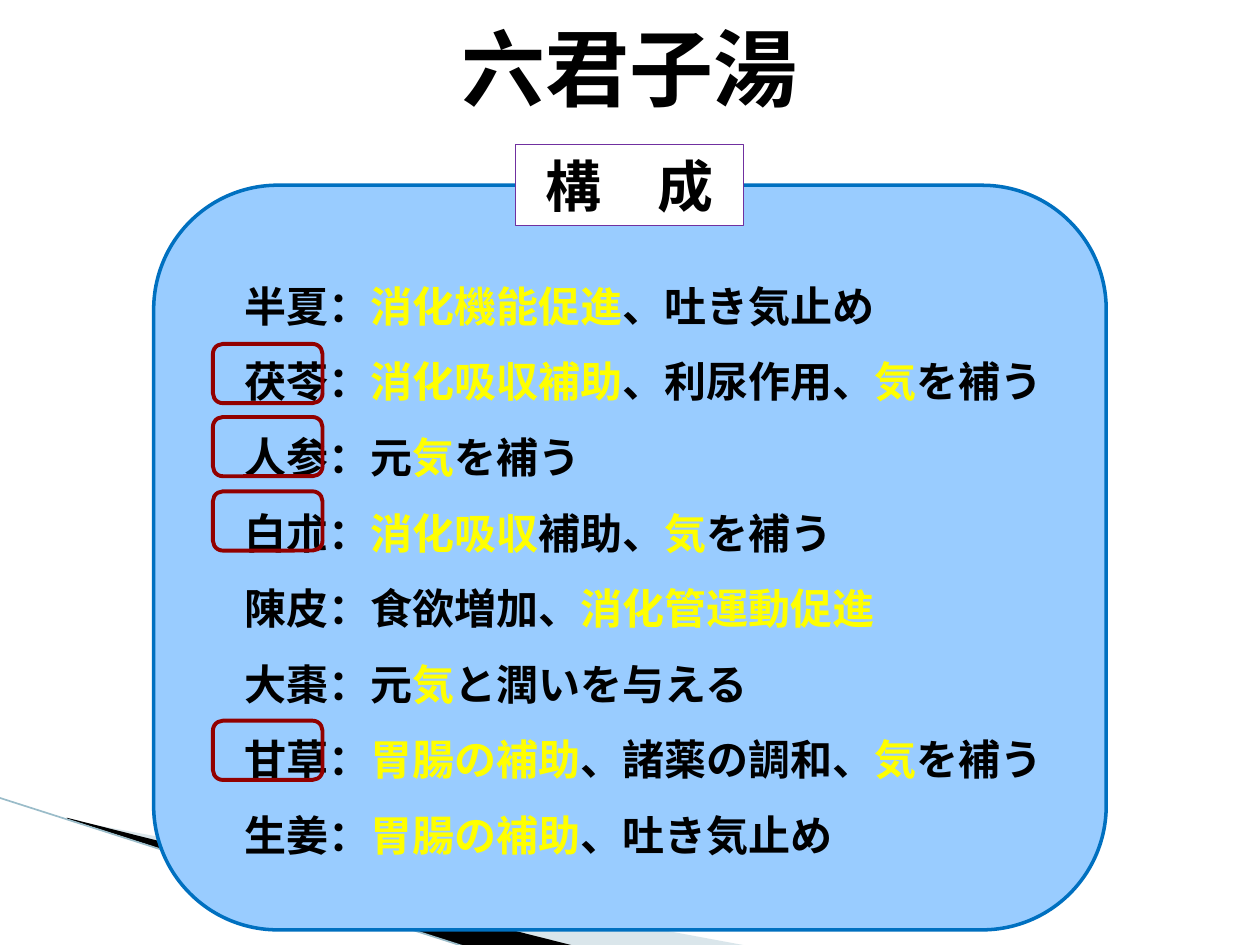
from dataclasses import dataclass
from typing import Optional

import pptx
import pptx.dml.color
import pptx.enum.shapes
import pptx.enum.text
import pptx.oxml
import pptx.oxml.ns
import pptx.util

COLORS = {
    "black": "000000",
    "white": "FFFFFF",
    "highlight": "FFFF00",
    "panel": "99CCFF",
    "panel_line": "0070C0",
    "label_line": "7030A0",
    "marker_line": "920000",
    "swoosh": "A3C2CE",
    "swoosh_line": "9ABCC9",
}
SHAPES = pptx.enum.shapes.MSO_SHAPE
ALIGN = pptx.enum.text.PP_ALIGN
ANCHOR = pptx.enum.text.MSO_ANCHOR

presentation = pptx.Presentation()
presentation.slide_width = pptx.util.Inches(10)
presentation.slide_height = pptx.util.Inches(7.5)
COLUMN = presentation.slide_width / 100
ROW = presentation.slide_height / 100


@dataclass
class Area:
    column: float
    row: float
    columns: float
    rows: float

    def lengths(self) -> list[int]:
        return [round(self.column * COLUMN), round(self.row * ROW),
                round(self.columns * COLUMN), round(self.rows * ROW)]


@dataclass
class Box:
    area: Area
    kind: int
    line: str
    line_width: float
    fill: Optional[str] = None


@dataclass
class Swoosh:
    points: list[tuple[float, float]]
    fill: str
    opacity: int = 100


@dataclass
class TextStyle:
    size: int
    font: str
    align: int
    anchor: int
    spacing: float = 1.0


TITLE_STYLE = TextStyle(48, "Arial", ALIGN.CENTER, ANCHOR.MIDDLE)
LABEL_STYLE = TextStyle(32, "Calibri", ALIGN.CENTER, ANCHOR.TOP)
HERB_STYLE = TextStyle(24, "Calibri", ALIGN.LEFT, ANCHOR.MIDDLE, 1.5)

SWOOSHES = [
    Swoosh([(5.5, 86.8), (59.5, 100.13), (45.6, 100.13), (5.5, 86.67)], "swoosh", 40),
    Swoosh([(5.3, 86.53), (45.7, 100.13), (37.2, 100.27), (5.4, 86.67)], "black"),
]
PANEL = Box(Area(12.2, 19.6, 75.6, 78.8), SHAPES.ROUNDED_RECTANGLE, "panel_line", 2, "panel")
LABEL = Box(Area(40.9, 15.33, 18.1, 8.53), SHAPES.RECTANGLE, "label_line", 0.75, "white")
MARKERS = [
    Box(Area(16.9, row, 8.7, 6.27), SHAPES.ROUNDED_RECTANGLE, "marker_line", 2.25)
    for row in (36.4, 44.13, 52, 76.27)
]

# Text between bars is highlighted.
HERBS = [
    "　半夏：|消化機能促進|、吐き気止め",
    "　茯苓：|消化吸収補助|、利尿作用、|気|を補う",
    "　人参：元|気|を補う",
    "　白朮：|消化吸収|補助、|気|を補う",
    "　陳皮：食欲増加、|消化管運動促進",
    "　大棗：元|気|と潤いを与える",
    "　甘草：|胃腸の補助|、諸薬の調和、|気|を補う",
    "　生姜：|胃腸の補助|、吐き気止め",
]


def color(name: str) -> pptx.dml.color.RGBColor:
    return pptx.dml.color.RGBColor.from_string(COLORS[name])


def apply(target, values: dict) -> None:
    for name, value in values.items():
        setattr(target, name, value)


def add_box(slide, box: Box):
    shape = slide.shapes.add_shape(box.kind, *box.area.lengths())
    shape.shadow.inherit = False
    if box.fill:
        shape.fill.solid()
        shape.fill.fore_color.rgb = color(box.fill)
    else:
        shape.fill.background()
    shape.line.color.rgb = color(box.line)
    shape.line.width = pptx.util.Pt(box.line_width)
    return shape


def add_swoosh(slide, swoosh: Swoosh) -> None:
    points = [(round(x * COLUMN), round(y * ROW)) for x, y in swoosh.points]
    builder = slide.shapes.build_freeform(*points[0])
    builder.add_line_segments(points[1:], close=True)
    shape = builder.convert_to_shape()
    shape.shadow.inherit = False
    shape.fill.solid()
    shape.fill.fore_color.rgb = color(swoosh.fill)
    shape.line.fill.background()
    if swoosh.opacity < 100:
        fill_color = shape.fill._xPr.find(".//" + pptx.oxml.ns.qn("a:srgbClr"))
        alpha = pptx.oxml.parse_xml(
            f'<a:alpha {pptx.oxml.ns.nsdecls("a")} val="{swoosh.opacity * 1000}"/>')
        fill_color.append(alpha)


def add_swoosh_edge(slide) -> None:
    connector = slide.shapes.add_connector(
        pptx.enum.shapes.MSO_CONNECTOR.STRAIGHT,
        round(-0.1 * COLUMN), round(84.4 * ROW), round(37.1 * COLUMN), round(100.27 * ROW))
    connector.line.color.rgb = color("swoosh_line")
    connector.line.width = pptx.util.Pt(0.95)
    connector._element.spPr.append(
        pptx.oxml.parse_xml(f'<a:effectLst {pptx.oxml.ns.nsdecls("a")}/>'))


def write(shape, lines: list[str], style: TextStyle) -> None:
    frame = shape.text_frame
    apply(frame, {"word_wrap": True, "vertical_anchor": style.anchor})
    for index, line in enumerate(lines):
        paragraph = frame.add_paragraph() if index else frame.paragraphs[0]
        apply(paragraph, {"alignment": style.align, "line_spacing": style.spacing})
        for part, text in enumerate(line.split("|")):
            run = paragraph.add_run()
            run.text = text
            apply(run.font, {"size": pptx.util.Pt(style.size), "name": style.font, "bold": True})
            run.font.color.rgb = color("highlight" if part % 2 else "black")


def main() -> None:
    slide = presentation.slides.add_slide(presentation.slide_layouts[6])
    for swoosh in SWOOSHES:
        add_swoosh(slide, swoosh)
    add_swoosh_edge(slide)
    title = slide.shapes.add_textbox(*Area(0, 0, 100, 14.27).lengths())
    write(title, ["六君子湯"], TITLE_STYLE)
    write(add_box(slide, PANEL), HERBS, HERB_STYLE)
    write(add_box(slide, LABEL), ["構　成"], LABEL_STYLE)
    for marker in MARKERS:
        add_box(slide, marker)
    presentation.save("out.pptx")


if __name__ == "__main__":
    main()
